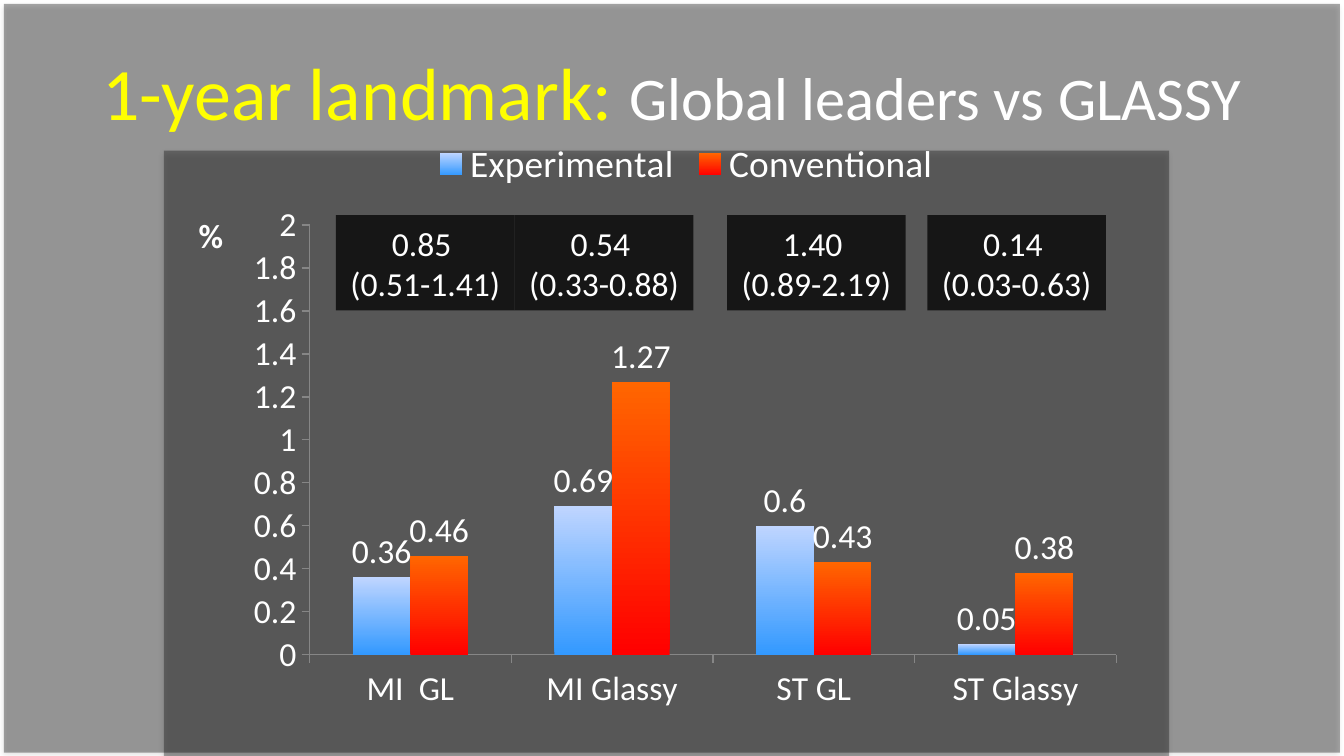
"""Build the 1-year landmark slide comparing Global leaders with GLASSY."""
from dataclasses import dataclass

from lxml import etree
from pptx import Presentation
from pptx.chart.data import CategoryChartData
from pptx.dml.color import RGBColor
from pptx.enum.chart import XL_CHART_TYPE, XL_LABEL_POSITION, XL_LEGEND_POSITION, XL_TICK_MARK
from pptx.enum.shapes import MSO_SHAPE
from pptx.enum.text import MSO_ANCHOR, MSO_AUTO_SIZE, PP_ALIGN
from pptx.oxml import parse_xml
from pptx.oxml.ns import nsdecls, qn
from pptx.util import Inches, Pt

RECTANGLE = MSO_SHAPE.RECTANGLE
COLUMNS = XL_CHART_TYPE.COLUMN_CLUSTERED
ABOVE_BAR = XL_LABEL_POSITION.OUTSIDE_END
LEGEND_TOP = XL_LEGEND_POSITION.TOP
TICK_OUT = XL_TICK_MARK.OUTSIDE
MIDDLE = MSO_ANCHOR.MIDDLE
FIT_TEXT = MSO_AUTO_SIZE.SHAPE_TO_FIT_TEXT
CENTER = PP_ALIGN.CENTER

SLIDE_WIDTH = Inches(10)
SLIDE_HEIGHT = SLIDE_WIDTH * 9 // 16
FONT = "Calibri"
COLORS = {
    "black": "000000",
    "white": "FFFFFF",
    "yellow": "FFFF00",
    "axis": "868686",
    "blue": "3399FF",
    "pale_blue": "BFD5FF",
    "red": "FF0000",
    "orange": "FF6600",
}


@dataclass(frozen=True)
class Panel:
    left: float
    top: float
    width: float
    height: float
    opacity: int
    shadow: bool = False


@dataclass(frozen=True)
class Arm:
    name: str
    rates: tuple[float, ...]
    bottom_color: str
    top_color: str


@dataclass(frozen=True)
class HazardRatio:
    left: float
    estimate: str
    interval: str


BACKDROP = Panel(0.03, 0.03, 9.94, 5.57, 34, True)
CHART_PANEL = Panel(1.22, 1.12, 7.48, 4.51, 33, True)
OUTCOMES = ("MI  GL", "MI Glassy", "ST GL", "ST Glassy")
ARMS = (
    Arm("Experimental", (0.36, 0.69, 0.6, 0.05), "blue", "pale_blue"),
    Arm("Conventional", (0.46, 1.27, 0.43, 0.38), "red", "orange"),
)
HAZARD_RATIOS = (
    HazardRatio(2.5, "0.85 ", "(0.51-1.41) "),
    HazardRatio(3.83, "0.54 ", "(0.33-0.88) "),
    HazardRatio(5.41, "1.40 ", "(0.89-2.19) "),
    HazardRatio(6.9, "0.14 ", "(0.03-0.63) "),
)
PLOT_AREA = {"x": 0.08, "y": 0.17, "w": 0.9, "h": 0.72}


def rgb(name: str) -> RGBColor:
    return RGBColor.from_string(COLORS[name])


def style_font(font, size: float, color: str = "white") -> None:
    font.name = FONT
    font.size = Pt(size)
    font.color.rgb = rgb(color)


def add_panel(slide, panel: Panel):
    shape = slide.shapes.add_shape(
        RECTANGLE, Inches(panel.left), Inches(panel.top), Inches(panel.width), Inches(panel.height)
    )
    shape.shadow.inherit = False
    shape.line.fill.background()
    shape.fill.solid()
    shape.fill.fore_color.rgb = rgb("black")
    properties = shape.element.spPr
    fill_color = properties.find(qn("a:solidFill")).find(qn("a:srgbClr"))
    etree.SubElement(fill_color, qn("a:alpha")).set("val", str(panel.opacity * 1000))
    if panel.shadow:
        properties.find(qn("a:effectLst")).append(parse_xml(
            f'<a:outerShdw {nsdecls("a")} blurRad="{Pt(3.1)}" dist="{Pt(1.8)}" '
            f'dir="5400000" rotWithShape="0"><a:srgbClr val="{COLORS["black"]}">'
            '<a:alpha val="35000"/></a:srgbClr></a:outerShdw>'
        ))
    return shape


def add_title(slide) -> None:
    title = slide.shapes.add_textbox(Inches(0.5), Inches(0.23), Inches(9), Inches(0.89))
    frame = title.text_frame
    frame.word_wrap = True
    frame.vertical_anchor = MIDDLE
    paragraph = frame.paragraphs[0]
    paragraph.alignment = CENTER
    for text, size, color in (
        ("1-year landmark: ", 39.6, "yellow"),
        ("Global leaders vs GLASSY", 32.4, "white"),
    ):
        run = paragraph.add_run()
        run.text = text
        style_font(run.font, size, color)


def style_axis(axis) -> None:
    axis.has_major_gridlines = False
    axis.major_tick_mark = TICK_OUT
    axis.format.line.color.rgb = rgb("axis")
    style_font(axis.tick_labels.font, 18)


def add_event_chart(slide) -> None:
    data = CategoryChartData()
    data.categories = OUTCOMES
    for arm in ARMS:
        data.add_series(arm.name, arm.rates)
    chart = slide.shapes.add_chart(
        COLUMNS, Inches(1.77), Inches(0.92), Inches(6.67), Inches(4.44), data
    ).chart
    style_font(chart.font, 18)
    chart.has_title = False
    chart.has_legend = True
    chart.legend.position = LEGEND_TOP
    chart.legend.include_in_layout = False
    style_font(chart.legend.font, 20)

    style_axis(chart.category_axis)
    style_axis(chart.value_axis)
    chart.value_axis.minimum_scale = 0
    chart.value_axis.maximum_scale = 2
    chart.value_axis.major_unit = 0.2

    plot = chart.plots[0]
    plot.gap_width = 150
    plot.overlap = 0
    plot.vary_by_categories = False
    for series, arm in zip(plot.series, ARMS):
        fill = series.format.fill
        fill.gradient()
        fill.gradient_angle = 90
        for stop, color in zip(fill.gradient_stops, (arm.bottom_color, arm.top_color)):
            stop.color.rgb = rgb(color)
        labels = series.data_labels
        labels.show_value = True
        labels.position = ABOVE_BAR
        style_font(labels.font, 18)

    plot_area = chart.element.find(qn("c:chart")).find(qn("c:plotArea"))
    for automatic in plot_area.findall(qn("c:layout")):
        plot_area.remove(automatic)
    sizes = "".join(f'<c:{key} val="{value}"/>' for key, value in PLOT_AREA.items())
    plot_area.insert(0, parse_xml(
        f'<c:layout {nsdecls("c")}><c:manualLayout><c:layoutTarget val="inner"/>'
        f'<c:xMode val="edge"/><c:yMode val="edge"/>{sizes}</c:manualLayout></c:layout>'
    ))


def add_hazard_ratio(slide, ratio: HazardRatio) -> None:
    frame = add_panel(slide, Panel(ratio.left, 1.6, 1.33, 0.71, 74)).text_frame
    frame.word_wrap = False
    frame.auto_size = FIT_TEXT
    frame.text = f"{ratio.estimate}\n{ratio.interval}"
    for paragraph in frame.paragraphs:
        paragraph.alignment = CENTER
        style_font(paragraph.font, 18)


def add_percent_sign(slide) -> None:
    unit = slide.shapes.add_textbox(Inches(1.38), Inches(1.55), Inches(0.38), Inches(0.4))
    frame = unit.text_frame
    frame.word_wrap = False
    frame.auto_size = FIT_TEXT
    frame.text = "%"
    style_font(frame.paragraphs[0].font, 18)
    frame.paragraphs[0].font.bold = True


def main() -> None:
    presentation = Presentation()
    presentation.slide_width = SLIDE_WIDTH
    presentation.slide_height = SLIDE_HEIGHT
    slide = presentation.slides.add_slide(presentation.slide_layouts[6])
    add_panel(slide, BACKDROP)
    add_title(slide)
    add_panel(slide, CHART_PANEL)
    add_event_chart(slide)
    for ratio in HAZARD_RATIOS:
        add_hazard_ratio(slide, ratio)
    add_percent_sign(slide)
    presentation.save("out.pptx")


if __name__ == "__main__":
    main()
